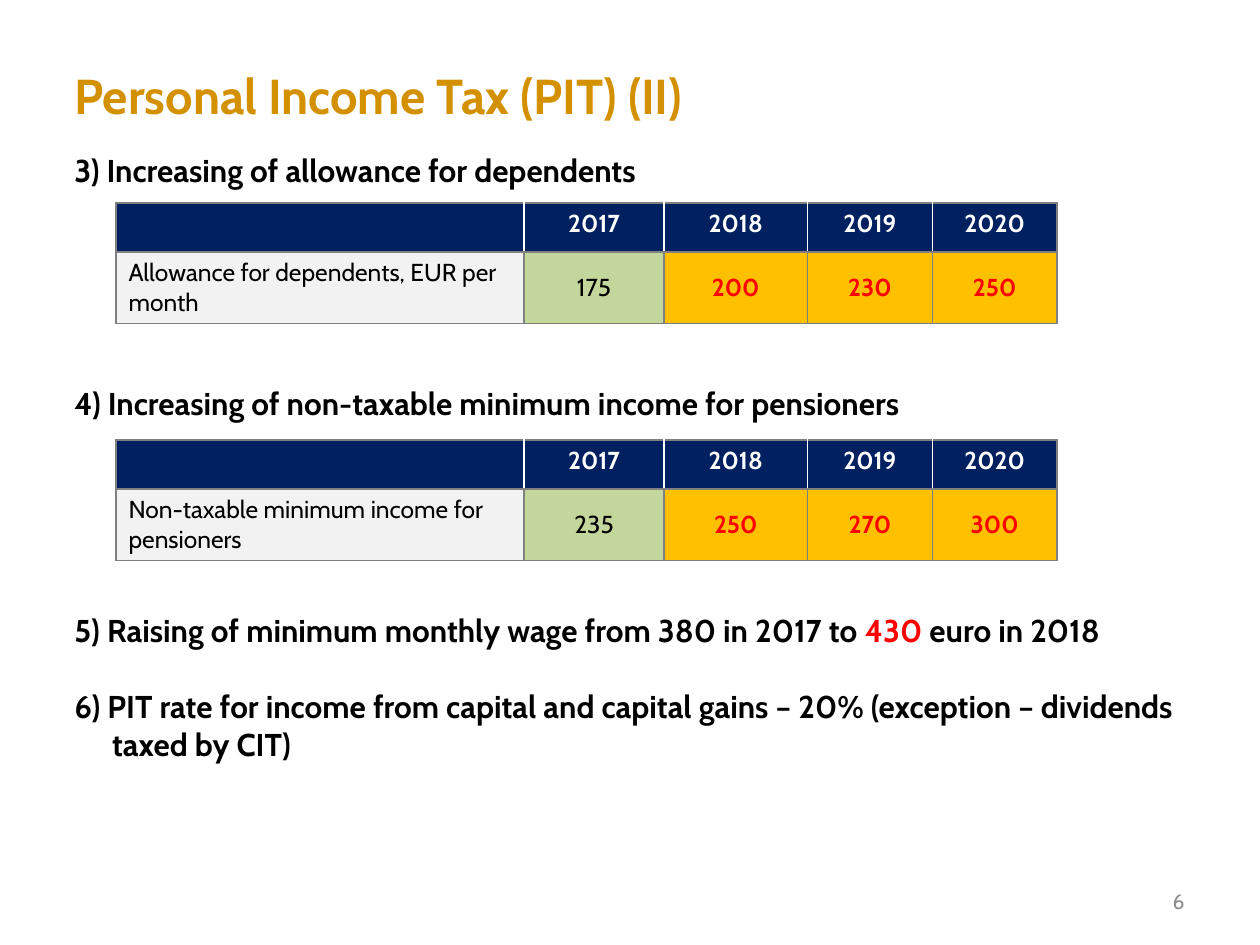
"""Build the slide on personal income tax changes, with two allowance tables."""
from dataclasses import dataclass

from lxml import etree
from pptx import Presentation
from pptx.dml.color import RGBColor
from pptx.enum.text import MSO_ANCHOR, MSO_AUTO_SIZE, PP_ALIGN
from pptx.oxml.ns import qn
from pptx.util import Inches, Pt

LEFT, CENTER, RIGHT = PP_ALIGN.LEFT, PP_ALIGN.CENTER, PP_ALIGN.RIGHT
TOP, MIDDLE = MSO_ANCHOR.TOP, MSO_ANCHOR.MIDDLE
NO_AUTOFIT = MSO_AUTO_SIZE.NONE

FONT = "Cabin"
GOLD = RGBColor(0xD3, 0x90, 0x01)
BLACK = RGBColor(0x00, 0x00, 0x00)
WHITE = RGBColor(0xFF, 0xFF, 0xFF)
RED = RGBColor(0xFF, 0x00, 0x00)
NAVY = RGBColor(0x00, 0x20, 0x60)
PALE_GRAY = RGBColor(0xF2, 0xF2, 0xF2)
GREEN = RGBColor(0xC3, 0xD6, 0x9B)
AMBER = RGBColor(0xFF, 0xC0, 0x00)
BORDER_GRAY = RGBColor(0x80, 0x80, 0x80)
NUMBER_GRAY = RGBColor(0x8C, 0x8C, 0x8C)

YEARS = ("2017", "2018", "2019", "2020")
COLUMN_WIDTHS = (3.24, 1.11, 1.14, 0.99, 0.99)
ROW_HEIGHTS = (0.39, 0.57)
TABLE_LEFT = 0.92


@dataclass(frozen=True)
class Measure:
    spans: tuple[tuple[str, RGBColor], ...]
    space_before: float = 0
    hanging: float = 0


@dataclass(frozen=True)
class AllowanceTable:
    top: float
    label: str
    amounts: tuple[str, ...]


@dataclass(frozen=True)
class CellStyle:
    fill: RGBColor
    color: RGBColor
    bold: bool
    align: PP_ALIGN = CENTER
    anchor: MSO_ANCHOR = MIDDLE


HEADER = CellStyle(NAVY, WHITE, True, anchor=TOP)
LABEL = CellStyle(PALE_GRAY, BLACK, False, LEFT, TOP)
CURRENT = CellStyle(GREEN, BLACK, False)
PLANNED = CellStyle(AMBER, RED, True)

MEASURES = (
    Measure((("3) Increasing of allowance for dependents", BLACK),)),
    Measure((("4) Increasing of non-taxable minimum income for pensioners", BLACK),), 111.5),
    Measure(
        (
            ("5) Raising of minimum monthly wage from 380 in 2017 to ", BLACK),
            ("430", RED),
            (" euro in 2018", BLACK),
        ),
        108,
        0.3,
    ),
    Measure(
        (
            (
                "6) PIT rate for income from capital and capital gains – 20% "
                "(exception – dividends taxed by CIT)",
                BLACK,
            ),
        ),
        21.7,
        0.3,
    ),
)

TABLES = (
    AllowanceTable(1.61, "Allowance for dependents, EUR per month", ("175", "200", "230", "250")),
    AllowanceTable(3.49, "Non-taxable minimum income for pensioners", ("235", "250", "270", "300")),
)


def place(shape, left: float, top: float, width: float, height: float) -> None:
    shape.left, shape.top = Inches(left), Inches(top)
    shape.width, shape.height = Inches(width), Inches(height)


def set_font(font, size: float, color: RGBColor, bold: bool) -> None:
    font.name, font.size, font.bold = FONT, Pt(size), bold
    font.color.rgb = color


def write_line(frame, text: str, size: float, color: RGBColor, bold: bool,
               align: PP_ALIGN, anchor: MSO_ANCHOR) -> None:
    frame.vertical_anchor = anchor
    paragraph = frame.paragraphs[0]
    paragraph.text = text
    paragraph.alignment = align
    set_font(paragraph.font, size, color, bold)


def add_title(page) -> None:
    title = page.shapes.title
    place(title, 0.49, 0.47, 6.22, 0.57)
    title.text_frame.auto_size = NO_AUTOFIT
    write_line(title.text_frame, "Personal Income Tax (PIT) (II)", 28, GOLD, True, LEFT, MIDDLE)


def add_measures(page, measures: tuple[Measure, ...]) -> None:
    body = page.placeholders[1]
    place(body, 0.49, 1.15, 9.16, 5)
    frame = body.text_frame
    frame.auto_size = NO_AUTOFIT
    for index, measure in enumerate(measures):
        paragraph = frame.add_paragraph() if index else frame.paragraphs[0]
        properties = paragraph._p.get_or_add_pPr()
        properties.set("marL", str(Inches(measure.hanging)))
        properties.set("indent", str(-Inches(measure.hanging)))
        etree.SubElement(properties, qn("a:buNone"))
        paragraph.space_before = Pt(measure.space_before)
        set_font(paragraph.font, 18, BLACK, True)
        for text, color in measure.spans:
            span = paragraph.add_run()
            span.text = text
            if color != BLACK:
                span.font.color.rgb = color


def add_borders(cell, left: RGBColor, right: RGBColor) -> None:
    properties = cell._tc.get_or_add_tcPr()
    sides = {"a:lnL": left, "a:lnR": right, "a:lnT": BORDER_GRAY, "a:lnB": BORDER_GRAY}
    for tag, color in sides.items():
        line = etree.SubElement(properties, qn(tag), w=str(Pt(1)))
        fill = etree.SubElement(line, qn("a:solidFill"))
        etree.SubElement(fill, qn("a:srgbClr"), val=str(color))


def add_allowance_table(page, content: AllowanceTable) -> None:
    rows = (("", *YEARS), (content.label, *content.amounts))
    styles = ((HEADER,) * len(COLUMN_WIDTHS), (LABEL, CURRENT, PLANNED, PLANNED, PLANNED))
    table = page.shapes.add_table(
        len(rows), len(COLUMN_WIDTHS), Inches(TABLE_LEFT), Inches(content.top),
        Inches(sum(COLUMN_WIDTHS)), Inches(sum(ROW_HEIGHTS)),
    ).table
    for column, width in zip(table.columns, COLUMN_WIDTHS):
        column.width = Inches(width)
    last = len(COLUMN_WIDTHS) - 1
    for row_index, height in enumerate(ROW_HEIGHTS):
        table.rows[row_index].height = Inches(height)
        inner = BORDER_GRAY if row_index else WHITE
        for column_index, style in enumerate(styles[row_index]):
            cell = table.cell(row_index, column_index)
            add_borders(
                cell,
                inner if column_index else BORDER_GRAY,
                inner if column_index < last else BORDER_GRAY,
            )
            cell.fill.solid()
            cell.fill.fore_color.rgb = style.fill
            cell.vertical_anchor = style.anchor
            write_line(cell.text_frame, rows[row_index][column_index], 14, style.color,
                       style.bold, style.align, style.anchor)


def add_page_number(page) -> None:
    box = page.shapes.add_textbox(Inches(7.17), Inches(6.95), Inches(2.33), Inches(0.4))
    box.text_frame.word_wrap = True
    write_line(box.text_frame, "6", 12, NUMBER_GRAY, False, RIGHT, MIDDLE)


def main() -> None:
    deck = Presentation()
    deck.slide_width, deck.slide_height = Inches(10), Inches(7.5)
    page = deck.slides.add_slide(deck.slide_layouts[1])
    add_page_number(page)
    add_title(page)
    add_measures(page, MEASURES)
    for content in TABLES:
        add_allowance_table(page, content)
    deck.save("out.pptx")


if __name__ == "__main__":
    main()
